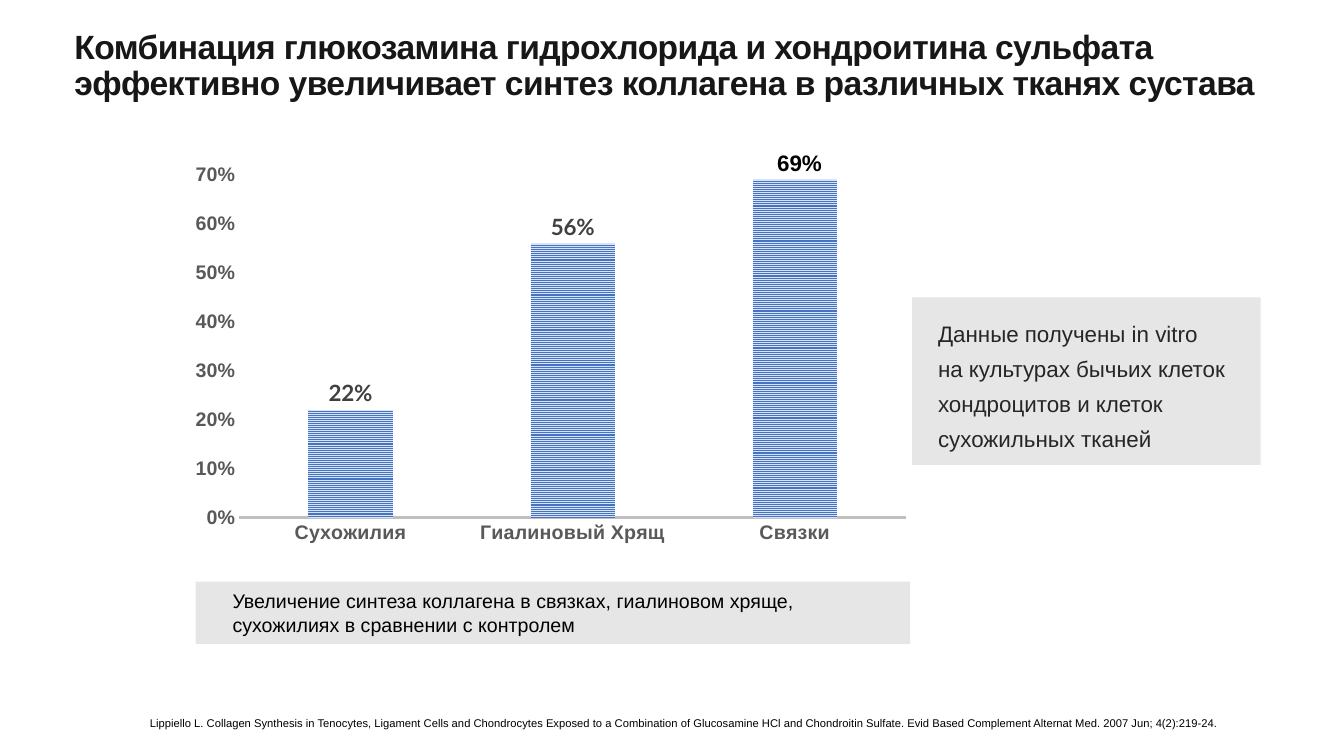
from lxml import etree
from pptx import Presentation
from pptx.chart.data import CategoryChartData
from pptx.dml.color import RGBColor
from pptx.enum.chart import XL_CHART_TYPE, XL_LABEL_POSITION, XL_TICK_MARK
from pptx.enum.dml import MSO_PATTERN
from pptx.enum.shapes import MSO_SHAPE
from pptx.enum.text import MSO_ANCHOR
from pptx.oxml.ns import qn
from pptx.util import Pt

BLACK = RGBColor(0x00, 0x00, 0x00)
INK = RGBColor(0x18, 0x17, 0x17)
DARK = RGBColor(0x26, 0x26, 0x26)
LABEL = RGBColor(0x40, 0x40, 0x40)
GREY = RGBColor(0x59, 0x59, 0x59)
RULE = RGBColor(0xBF, 0xBF, 0xBF)
PANEL = RGBColor(0xE7, 0xE6, 0xE6)
BLUE = RGBColor(0x44, 0x72, 0xC4)
PALE = RGBColor(0xDA, 0xE3, 0xF3)

FONT = "Arial"
TOP, MIDDLE = MSO_ANCHOR.TOP, MSO_ANCHOR.MIDDLE
NO_TICK = XL_TICK_MARK.NONE

TITLE = ("Комбинация глюкозамина гидрохлорида и хондроитина сульфата "
         "эффективно увеличивает синтез коллагена в различных тканях сустава")
CAPTION = ("Увеличение синтеза коллагена в связках, гиалиновом хряще,\n"
           "сухожилиях в сравнении с контролем")
NOTE = ("Данные получены in vitro\nна культурах бычьих клеток\n"
        "хондроцитов и клеток\nсухожильных тканей")
CITE = ("Lippiello L. Collagen Synthesis in Tenocytes, Ligament Cells and "
        "Chondrocytes Exposed to a Combination of Glucosamine HCl and "
        "Chondroitin Sulfate. Evid Based Complement Alternat Med. "
        "2007 Jun; 4(2):219-24.")
TISSUES = {"Сухожилия": 0.22, "Гиалиновый Хрящ": 0.56, "Связки": 0.69}


def set_font(font, size, color, bold=False, name=FONT):
    font.name, font.size, font.bold = name, Pt(size), bold
    font.color.rgb = color


def add_panel(slide, *box):
    panel = slide.shapes.add_shape(MSO_SHAPE.RECTANGLE, *map(Pt, box))
    panel.shadow.inherit = False
    panel.fill.solid()
    panel.fill.fore_color.rgb = PANEL
    panel.line.fill.background()


def add_text(slide, text, box, size, color, bold=False, anchor=TOP,
             leading=1.0, track=0):
    """Add wrapped text; track is letter spacing in hundredths of a point."""
    frame = slide.shapes.add_textbox(*map(Pt, box)).text_frame
    frame.word_wrap = True
    frame.vertical_anchor = anchor
    frame.text = text
    for para in frame.paragraphs:
        para.line_spacing = leading
        for run in para.runs:
            set_font(run.font, size, color, bold)
            if track:
                run.font._element.set("spc", str(track))


def style_axis(axis):
    axis.major_tick_mark = axis.minor_tick_mark = NO_TICK
    axis.has_major_gridlines = False
    set_font(axis.tick_labels.font, 14, GREY, True)


def add_node(parent, tag, val=None):
    node = etree.SubElement(parent, qn(tag))
    if val is not None:
        node.set("val", str(val))
    return node


def place_plot(chart, x, y, w, h):
    """Fix the inner plot area, in fractions of the chart frame."""
    area = chart.element.find(".//" + qn("c:plotArea"))
    for old in area.findall(qn("c:layout")):
        area.remove(old)
    layout = etree.Element(qn("c:layout"))
    area.insert(0, layout)
    manual = add_node(layout, "c:manualLayout")
    add_node(manual, "c:layoutTarget", "inner")
    add_node(manual, "c:xMode", "edge")
    add_node(manual, "c:yMode", "edge")
    for key, val in zip("xywh", (x, y, w, h)):
        add_node(manual, "c:" + key, val)


def hide_label(chart, index):
    label = etree.Element(qn("c:dLbl"))
    add_node(label, "c:idx", index)
    add_node(label, "c:delete", 1)
    chart.element.find(".//" + qn("c:ser") + "/" + qn("c:dLbls")).insert(0, label)


def add_bars(slide, *box):
    data = CategoryChartData(number_format="0%")
    data.categories = list(TISSUES)
    data.add_series("Series 1", list(TISSUES.values()))
    chart = slide.shapes.add_chart(
        XL_CHART_TYPE.COLUMN_CLUSTERED, *map(Pt, box), data).chart
    chart.has_legend = chart.has_title = False
    set_font(chart.font, 16, BLACK, True)

    cats, vals = chart.category_axis, chart.value_axis
    style_axis(cats)
    cats.format.line.color.rgb = RULE
    cats.format.line.width = Pt(1.5)
    style_axis(vals)
    vals.format.line.fill.background()
    vals.minimum_scale, vals.maximum_scale, vals.major_unit = 0, 0.7, 0.1
    vals.tick_labels.number_format = "0%"
    vals.tick_labels.number_format_is_linked = False

    plot = chart.plots[0]
    plot.vary_by_categories = False
    plot.gap_width, plot.overlap = 164, -22
    bars = plot.series[0]
    bars.invert_if_negative = False
    fill = bars.format.fill
    fill.patterned()
    fill.pattern = MSO_PATTERN.NARROW_HORIZONTAL
    fill.fore_color.rgb, fill.back_color.rgb = BLUE, PALE

    labels = bars.data_labels
    labels.show_value = True
    labels.number_format = "0%"
    labels.number_format_is_linked = False
    labels.position = XL_LABEL_POSITION.OUTSIDE_END
    set_font(labels.font, 16, LABEL, True, "Lato")
    hide_label(chart, 2)
    place_plot(chart, 0.06, 0.03, 0.92, 0.9)


def main():
    deck = Presentation()
    deck.slide_width, deck.slide_height = Pt(960), Pt(540)
    slide = deck.slides.add_slide(deck.slide_layouts[6])
    add_panel(slide, 139.7, 415.5, 510.5, 44.5)
    add_panel(slide, 651.5, 212.5, 249, 119.5)
    add_text(slide, TITLE, (46, 10, 867.5, 75), 24, INK, True, MIDDLE, 0.9, -40)
    add_bars(slide, 139.7, 116.6, 517.7, 272.2)
    add_text(slide, CITE, (100, 508.3, 860, 17), 8, BLACK)
    add_text(slide, CAPTION, (159, 417, 436, 41), 14, BLACK, anchor=MIDDLE)
    add_text(slide, NOTE, (663, 219.6, 227, 105), 16, DARK, leading=1.3)
    add_text(slide, "69%", (548, 103, 51, 26.5), 16, BLACK, True)
    deck.save("out.pptx")


if __name__ == "__main__":
    main()
